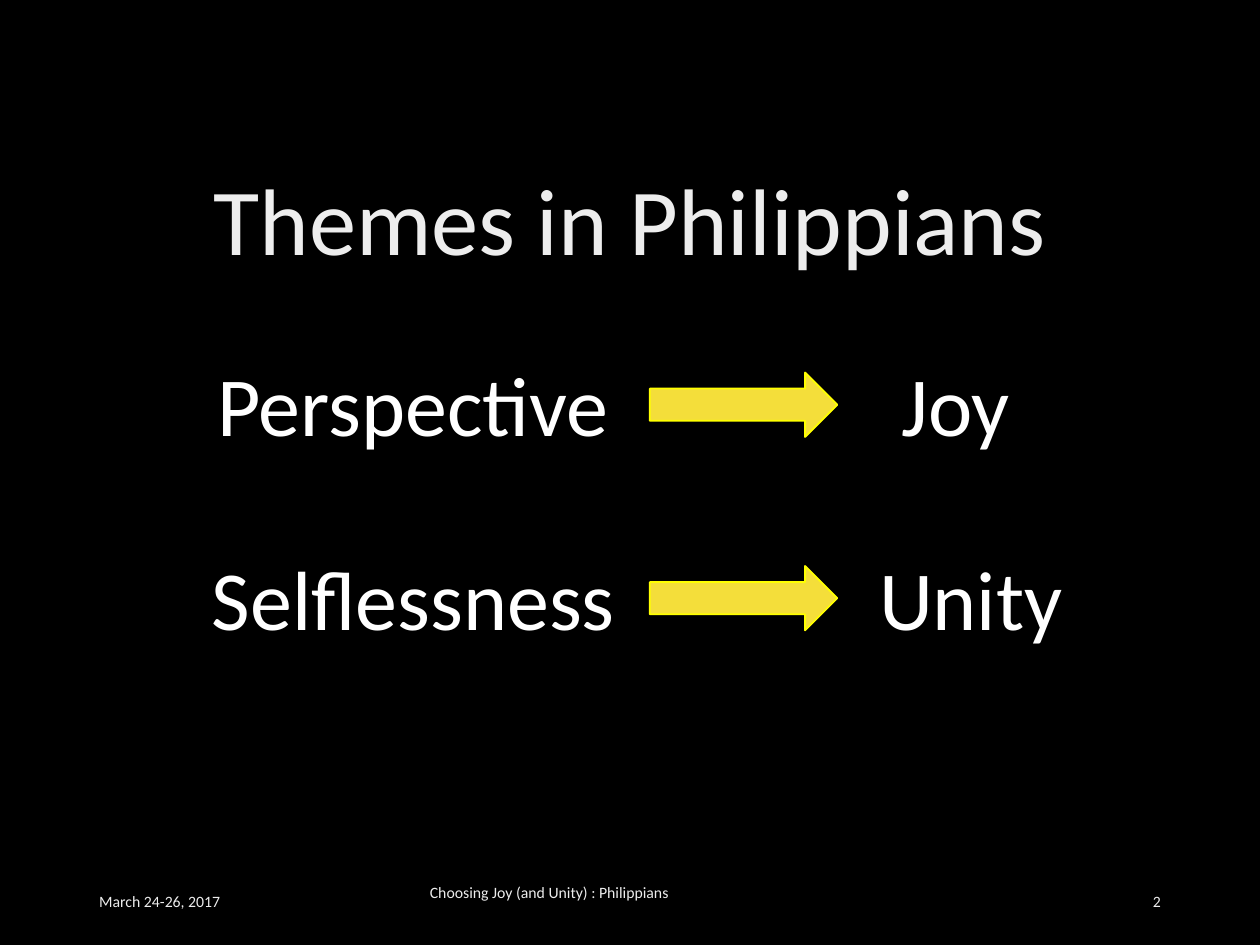
from pptx import Presentation
from pptx.dml.color import RGBColor
from pptx.enum import shapes, text
from pptx.util import Cm, Pt

ALIGN = text.PP_ALIGN
ANCHOR = text.MSO_ANCHOR


def paint(target, color):
    """Give a fill a solid colour from a hex string."""
    target.solid()
    target.fore_color.rgb = RGBColor.from_string(color)


def write(frame, words, size=48, color="FFFFFF", font="Calibri",
          align=ALIGN.CENTER, anchor=ANCHOR.TOP, wrap=False, spacing=None):
    """Put one formatted paragraph in a text frame."""
    frame.text = words
    frame.word_wrap = wrap
    frame.auto_size = text.MSO_AUTO_SIZE.NONE
    frame.vertical_anchor = anchor
    paragraph = frame.paragraphs[0]
    paragraph.alignment = align
    paragraph.line_spacing = spacing
    paragraph.font.name = font
    paragraph.font.size = Pt(size)
    paint(paragraph.font.fill, color)


class Deck:
    """Hold the style and the current slide."""

    soft = "EDEDED"
    gold = "F4DE3A"
    edge = "FFFF00"

    def __init__(self):
        """Start a deck with one black title-only slide."""
        self.show = Presentation()
        self.show.slide_width, self.show.slide_height = Cm(25.4), Cm(19.05)
        self.slide = self.show.slides.add_slide(self.show.slide_layouts[5])
        paint(self.slide.background.fill, "000000")

    def title(self, words, left, top, width, height):
        """Place and format the title."""
        heading = self.slide.shapes.title
        heading.left, heading.top = Cm(left), Cm(top)
        heading.width, heading.height = Cm(width), Cm(height)
        write(heading.text_frame, words, size=54, color=self.soft,
              anchor=ANCHOR.MIDDLE, wrap=True, spacing=0.9)

    def label(self, words, left, top, width, height, **style):
        """Add a text box."""
        box = self.slide.shapes.add_textbox(Cm(left), Cm(top), Cm(width), Cm(height))
        write(box.text_frame, words, **style)

    def footer(self, words, left, width, align, height=1.02):
        """Add a small note at the foot of the slide."""
        self.label(words, left, 17.65, width, height, size=9, color=self.soft,
                   align=align, anchor=ANCHOR.MIDDLE)

    def arrow(self, left, top, width, height):
        """Add a yellow block arrow."""
        pointer = self.slide.shapes.add_shape(
            shapes.MSO_SHAPE.RIGHT_ARROW, Cm(left), Cm(top), Cm(width), Cm(height))
        pointer.shadow.inherit = False
        paint(pointer.fill, self.gold)
        paint(pointer.line.fill, self.edge)
        pointer.line.width = Pt(1)


def main():
    """Build and save the slide."""
    deck = Deck()
    deck.title("Themes in Philippians", 1.75, 3.15, 21.9, 2.77)

    themes = [
        (("Perspective", 4.06, 8.53), ("Joy", 17.88, 2.77)),
        (("Selflessness", 3.89, 8.89), ("Unity", 17.45, 4.24)),
    ]
    for row, theme in enumerate(themes):
        top = 6.99 + row * 3.9
        for words, left, width in theme:
            deck.label(words, left, top, width, 2.24)
        deck.arrow(13.1, top + 0.52, 3.78, 1.3)

    deck.footer("Choosing Joy (and Unity) : Philippians", 8.4, 5.34, ALIGN.CENTER, height=0.66)
    deck.footer("2", 17.93, 5.72, ALIGN.RIGHT)
    deck.footer("March 24-26, 2017", 1.75, 5.72, ALIGN.LEFT)
    deck.show.save("out.pptx")


if __name__ == "__main__":
    main()
